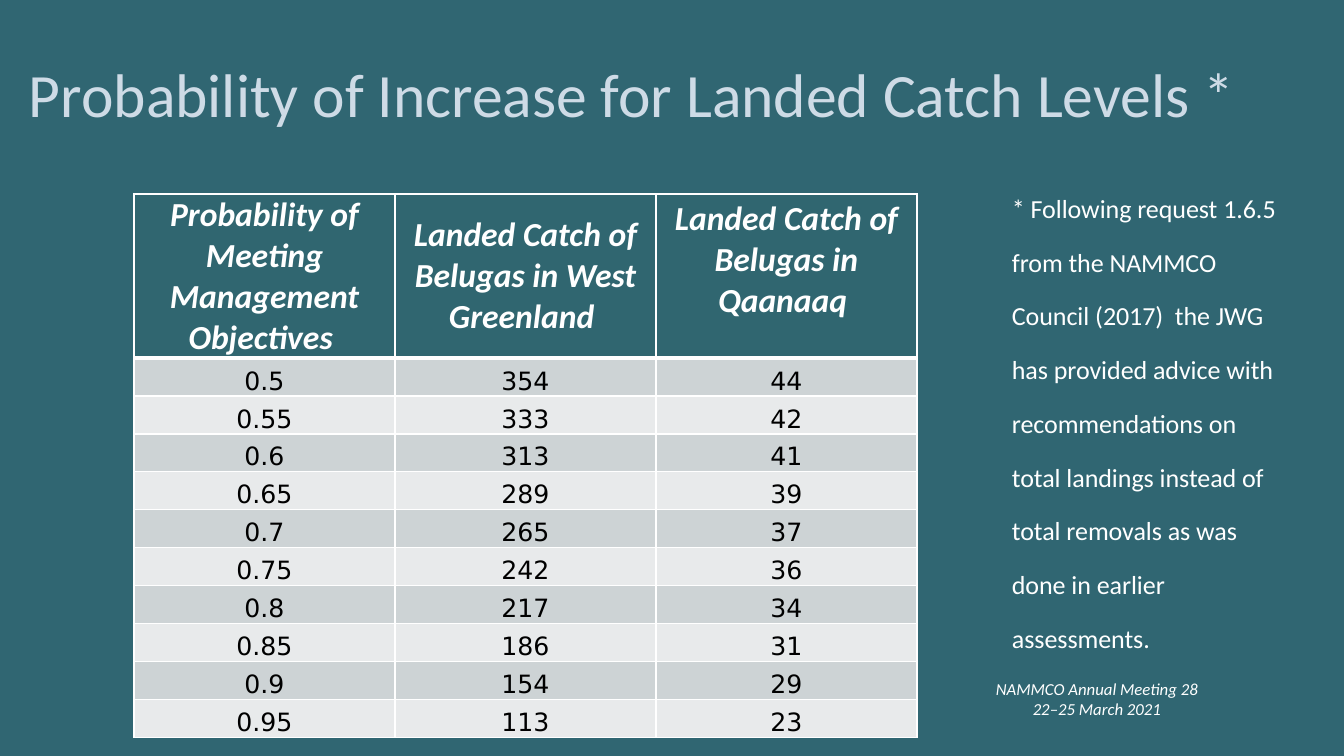
"""Build the slide on probability of increase for landed catch levels."""
from lxml import etree
from pptx import Presentation
from pptx.dml.color import RGBColor
from pptx.enum.text import MSO_ANCHOR, PP_ALIGN
from pptx.oxml.ns import qn
from pptx.util import Pt

TOP, MIDDLE, BOTTOM = MSO_ANCHOR.TOP, MSO_ANCHOR.MIDDLE, MSO_ANCHOR.BOTTOM
LEFT, CENTER = PP_ALIGN.LEFT, PP_ALIGN.CENTER

TITLE = "Probability of Increase for Landed Catch Levels *"
NOTE = (
    "* Following request 1.6.5 from the NAMMCO Council (2017)  the JWG has "
    "provided advice with recommendations on total landings instead of total "
    "removals as was done in earlier assessments."
)
FOOTER = ["NAMMCO Annual Meeting 28", "22–25 March 2021"]
HEADERS = [
    "Probability of Meeting Management Objectives ",
    "Landed Catch of Belugas in West Greenland ",
    "Landed Catch of Belugas in Qaanaaq ",
]
CATCHES = [
    ("0.5", "354", "44"),
    ("0.55", "333", "42"),
    ("0.6", "313", "41"),
    ("0.65", "289", "39"),
    ("0.7", "265", "37"),
    ("0.75", "242", "36"),
    ("0.8", "217", "34"),
    ("0.85", "186", "31"),
    ("0.9", "154", "29"),
    ("0.95", "113", "23"),
]

THEME = {
    "background": "306672",
    "header": "306670",
    "bands": ("CDD3D5", "E8EAEB"),
    "line": "FFFFFF",
    "title": {"size": 44, "font": "Calibri", "color": "CEDBE6"},
    "note": {"size": 32, "font": "Calibri", "color": "FFFFFF", "baseline": 30000},
    "footer": {"size": 12, "font": "Calibri", "color": "FFFFFF", "italic": True},
    "head": {"size": 24, "font": "Calibri", "color": "FFFFFF", "bold": True, "italic": True},
    "body": {"size": 18, "font": "DejaVu Sans", "color": "000000"},
}

SLIDE_W, SLIDE_H = 1344, 756
TITLE_BOX = (19, 25, 1249, 146)
NOTE_BOX = (1002, 182, 296, 372)
FOOTER_BOX = (981, 679, 232, 40)
TABLE_LEFT, TABLE_TOP = 134, 194
COL_W, HEAD_H, ROW_H = 261, 164, 38
TIGHT = (1, 1, 1, 0)
LAST_HEAD = (10, 5, 10, 36)


def px(n):
    return round(n * 914400 / 100.8)


def add_run(p, text, style):
    r = p.add_run()
    r.text = text
    r.font.size = Pt(style["size"])
    r.font.name = style["font"]
    r.font.bold = style.get("bold", False)
    r.font.italic = style.get("italic", False)
    r.font.color.rgb = RGBColor.from_string(style["color"])
    if "baseline" in style:
        r.font._element.set("baseline", str(style["baseline"]))


def write(tf, lines, style, align):
    for i, line in enumerate(lines):
        p = tf.paragraphs[0] if i == 0 else tf.add_paragraph()
        p.alignment = align
        add_run(p, line, style)


def add_text(slide, box, lines, style, align=LEFT, anchor=TOP):
    tf = slide.shapes.add_textbox(*map(px, box)).text_frame
    tf.word_wrap = True
    tf.vertical_anchor = anchor
    write(tf, lines, style, align)
    return tf


def set_borders(cell, top, bottom):
    tc_pr = cell._tc.get_or_add_tcPr()
    for side, width in (("L", 1), ("R", 1), ("T", top), ("B", bottom)):
        ln = etree.SubElement(tc_pr, qn(f"a:ln{side}"), w=str(Pt(width)))
        fill = etree.SubElement(ln, qn("a:solidFill"))
        etree.SubElement(fill, qn("a:srgbClr"), val=THEME["line"])


def fill_cell(cell, text, style, color, anchor, margins, top=1, bottom=1):
    set_borders(cell, top, bottom)
    cell.fill.solid()
    cell.fill.fore_color.rgb = RGBColor.from_string(color)
    cell.vertical_anchor = anchor
    (cell.margin_left, cell.margin_top,
     cell.margin_right, cell.margin_bottom) = map(px, margins)
    write(cell.text_frame, [text], style, CENTER)


def add_catch_table(slide):
    n_rows, n_cols = len(CATCHES) + 1, len(HEADERS)
    size = (n_cols * COL_W, HEAD_H + len(CATCHES) * ROW_H)
    table = slide.shapes.add_table(
        n_rows, n_cols, *map(px, (TABLE_LEFT, TABLE_TOP, *size))).table
    for col in table.columns:
        col.width = px(COL_W)
    for i, row in enumerate(table.rows):
        row.height = px(ROW_H if i else HEAD_H)
    for c, text in enumerate(HEADERS):
        last = c == n_cols - 1
        fill_cell(table.cell(0, c), text, THEME["head"], THEME["header"],
                  BOTTOM if last else MIDDLE, LAST_HEAD if last else TIGHT, bottom=3)
    for i, values in enumerate(CATCHES):
        for c, text in enumerate(values):
            fill_cell(table.cell(i + 1, c), text, THEME["body"], THEME["bands"][i % 2],
                      BOTTOM, TIGHT, top=1 if i else 3)


def main():
    prs = Presentation()
    prs.slide_width, prs.slide_height = px(SLIDE_W), px(SLIDE_H)
    s = prs.slides.add_slide(prs.slide_layouts[6])
    s.background.fill.solid()
    s.background.fill.fore_color.rgb = RGBColor.from_string(THEME["background"])
    add_text(s, FOOTER_BOX, FOOTER, THEME["footer"], CENTER, MIDDLE)
    title = add_text(s, TITLE_BOX, [TITLE], THEME["title"], anchor=MIDDLE)
    title.paragraphs[0].line_spacing = 0.9
    add_catch_table(s)
    add_text(s, NOTE_BOX, [NOTE], THEME["note"])
    prs.save("out.pptx")


if __name__ == "__main__":
    main()
